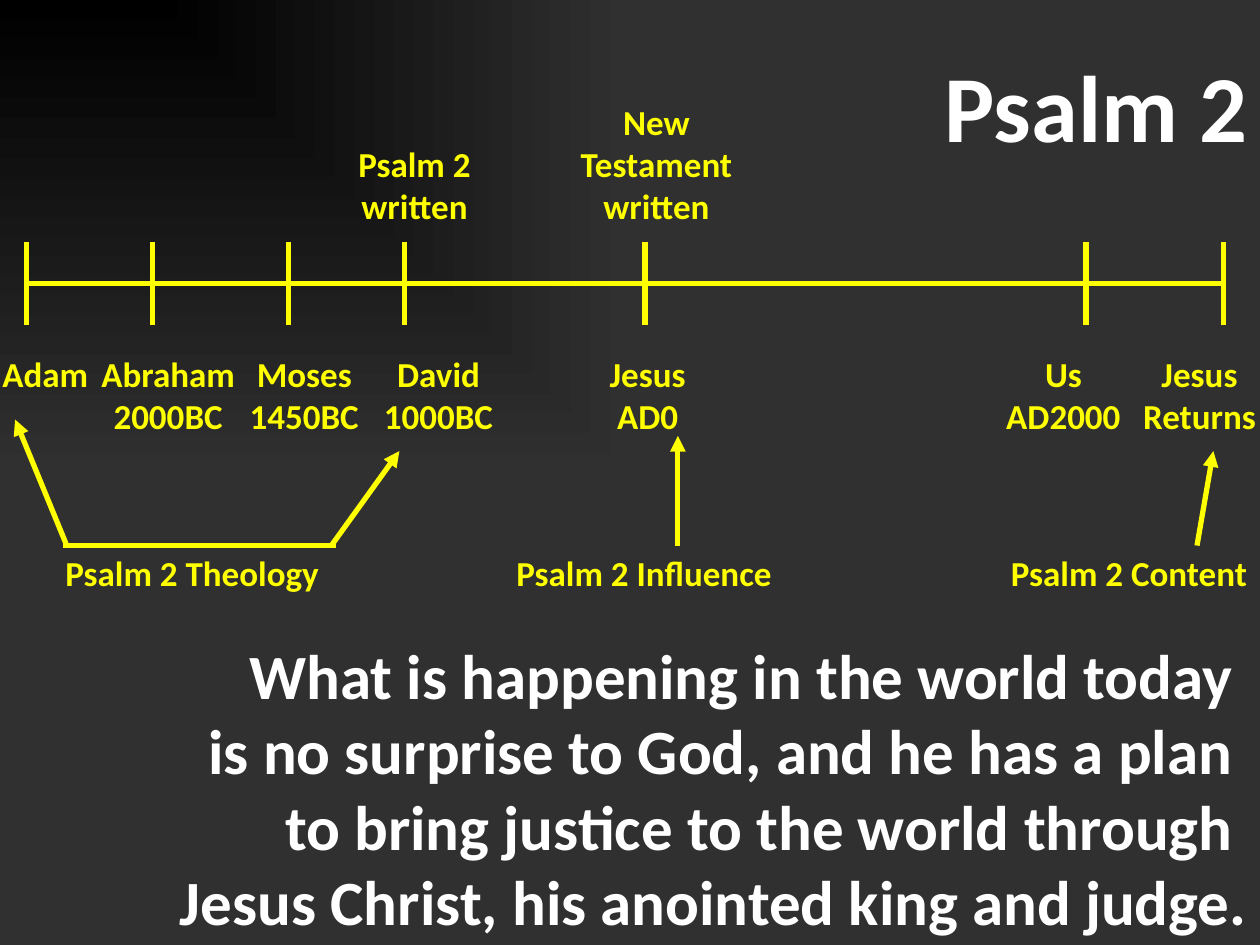
from dataclasses import dataclass

from lxml.etree import SubElement
from pptx import Presentation
from pptx.dml.color import RGBColor
from pptx.enum.shapes import MSO_CONNECTOR
from pptx.enum.text import PP_ALIGN
from pptx.oxml.ns import qn
from pptx.util import Inches, Pt


@dataclass(frozen=True)
class Theme:
    font: str = "Calibri"
    white: str = "FFFFFF"
    yellow: str = "FFFF00"
    dark: str = "000000"
    grey: str = "303030"
    title_size: int = 54
    body_size: int = 36
    label_size: int = 20
    line_width: int = 3


class TimelineSlide:
    def __init__(self, slide, theme):
        self.slide = slide
        self.theme = theme

    def background(self):
        """Fade from the dark top left corner to grey."""
        fill = self.slide.background.fill
        fill.gradient()
        for stop, color in zip(fill.gradient_stops, (self.theme.dark, self.theme.grey)):
            stop.color.rgb = RGBColor.from_string(color)
        gradient = self.slide.element.find(".//" + qn("a:gradFill"))
        gradient.remove(gradient.find(qn("a:lin")))
        corner = SubElement(gradient, qn("a:path"), path="rect")
        SubElement(corner, qn("a:fillToRect"), r="100000", b="100000")

    def text(self, text, left, top, width, height, *, size=None, color=None,
             align=PP_ALIGN.CENTER, side_inset=0.1):
        shape = self.slide.shapes.add_textbox(
            Inches(left), Inches(top), Inches(width), Inches(height))
        frame = shape.text_frame
        frame.word_wrap = True
        frame.margin_left = frame.margin_right = Inches(side_inset)
        frame.text = text
        for paragraph in frame.paragraphs:
            paragraph.alignment = align
            font = paragraph.runs[0].font
            font.name = self.theme.font
            font.size = Pt(size or self.theme.label_size)
            font.bold = True
            font.color.rgb = RGBColor.from_string(color or self.theme.yellow)

    def line(self, start, end, arrow=False):
        connector = self.slide.shapes.add_connector(
            MSO_CONNECTOR.STRAIGHT, *map(Inches, start + end))
        connector.line.color.rgb = RGBColor.from_string(self.theme.yellow)
        connector.line.width = Pt(self.theme.line_width)
        if arrow:
            SubElement(connector.line._get_or_add_ln(), qn("a:tailEnd"), type="triangle")
        SubElement(connector.element.spPr, qn("a:effectLst"))


def main():
    presentation = Presentation()
    presentation.slide_width = Inches(10)
    presentation.slide_height = Inches(7.5)
    theme = Theme()
    page = TimelineSlide(presentation.slides.add_slide(presentation.slide_layouts[6]), theme)
    page.background()

    page.text("Psalm 2", 0, 0.33, 10, 1, size=theme.title_size, color=theme.white,
              align=PP_ALIGN.RIGHT)
    message = (
        "What is happening in the world today \n"
        "is no surprise to God, and he has a plan \n"
        "to bring justice to the world through \n"
        "Jesus Christ, his anointed king and judge."
    )
    page.text(message, 0.17, 5, 9.83, 2.5, size=theme.body_size, color=theme.white,
              align=PP_ALIGN.RIGHT)

    # Time axis: tick position, label, label left and label width
    events = [
        (0.21, "Adam", -0.08, 0.88),
        (1.21, "Abraham 2000BC", 0.71, 1.25),
        (2.29, "Moses 1450BC", 1.79, 1.25),
        (3.21, "David 1000BC", 2.92, 1.12),
        (5.12, "Jesus AD0", 4.58, 1.12),
        (8.62, "Us AD2000", 7.88, 1.12),
        (9.71, "Jesus Returns", 8.96, 1.12),
    ]
    axis_y, half_tick = 2.25, 0.33
    page.line((events[0][0], axis_y), (events[-1][0], axis_y))
    for tick, label, left, width in events:
        page.line((tick, axis_y + half_tick), (tick, axis_y - half_tick))
        page.text(label, left, 2.75, width, 0.75, side_inset=0)

    # Writings above the axis end on the same line
    writings_bottom = 1.87
    for label, left, height in [("Psalm 2 written", 2.54, 0.79),
                                ("New Testament written", 4.46, 1.12)]:
        page.text(label, left, writings_bottom - height, 1.5, height)

    # Themes of the psalm, pointing up at the events
    theme_y = 4.33
    for label, left, align in [("Psalm 2 Theology", 0.42, PP_ALIGN.LEFT),
                               ("Psalm 2 Influence", 4, PP_ALIGN.LEFT),
                               ("Psalm 2 Content", 7.75, PP_ALIGN.CENTER)]:
        page.text(label, left, theme_y, 2.42, 0.5, align=align)
    page.line((0.5, theme_y), (2.67, theme_y))
    for start_x, tip in [(0.53, (0.12, 3.33)), (2.63, (3.17, 3.58)),
                         (5.38, (5.38, 3.46)), (9.5, (9.63, 3.58))]:
        page.line((start_x, theme_y), tip, arrow=True)

    presentation.save("out.pptx")


if __name__ == "__main__":
    main()
